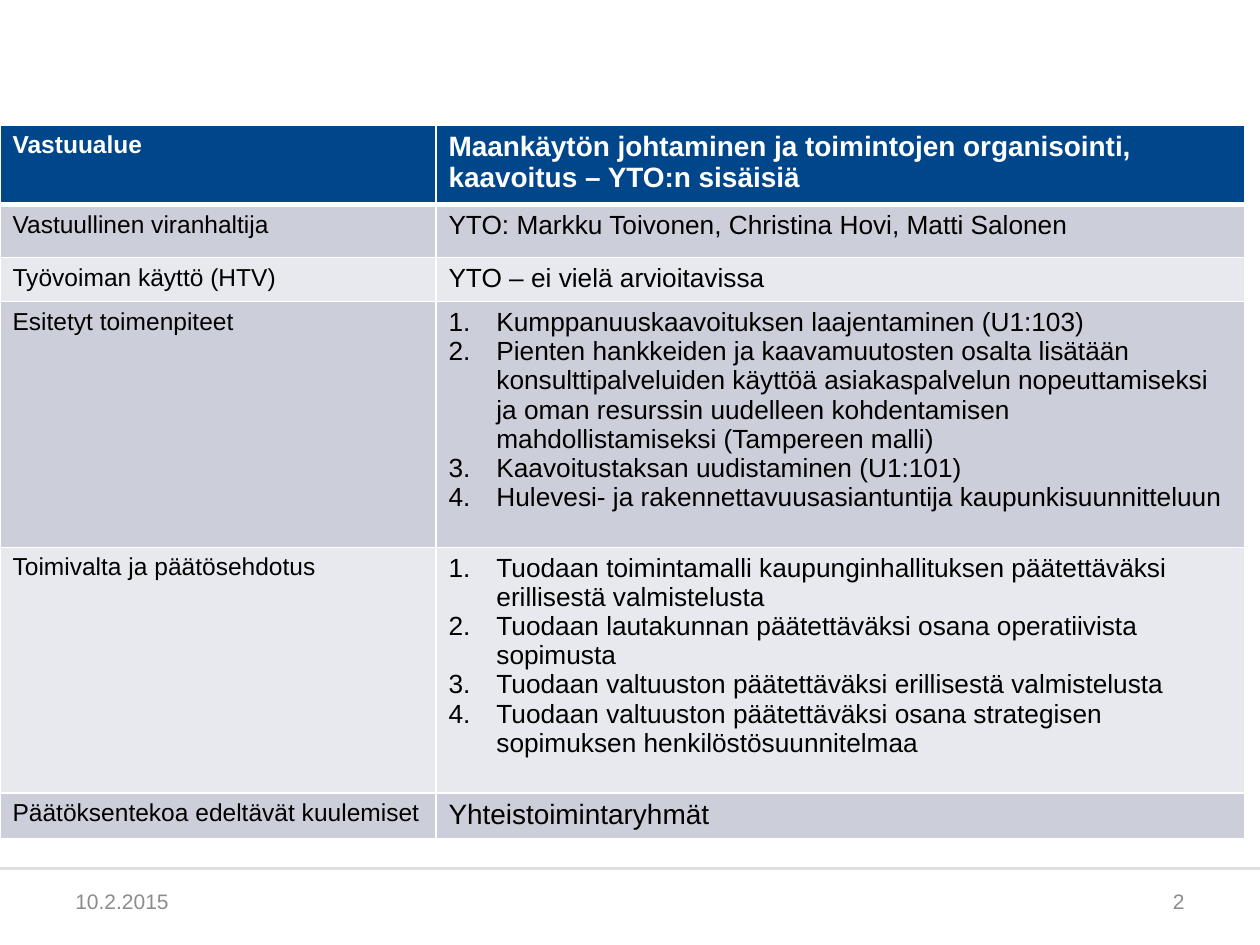
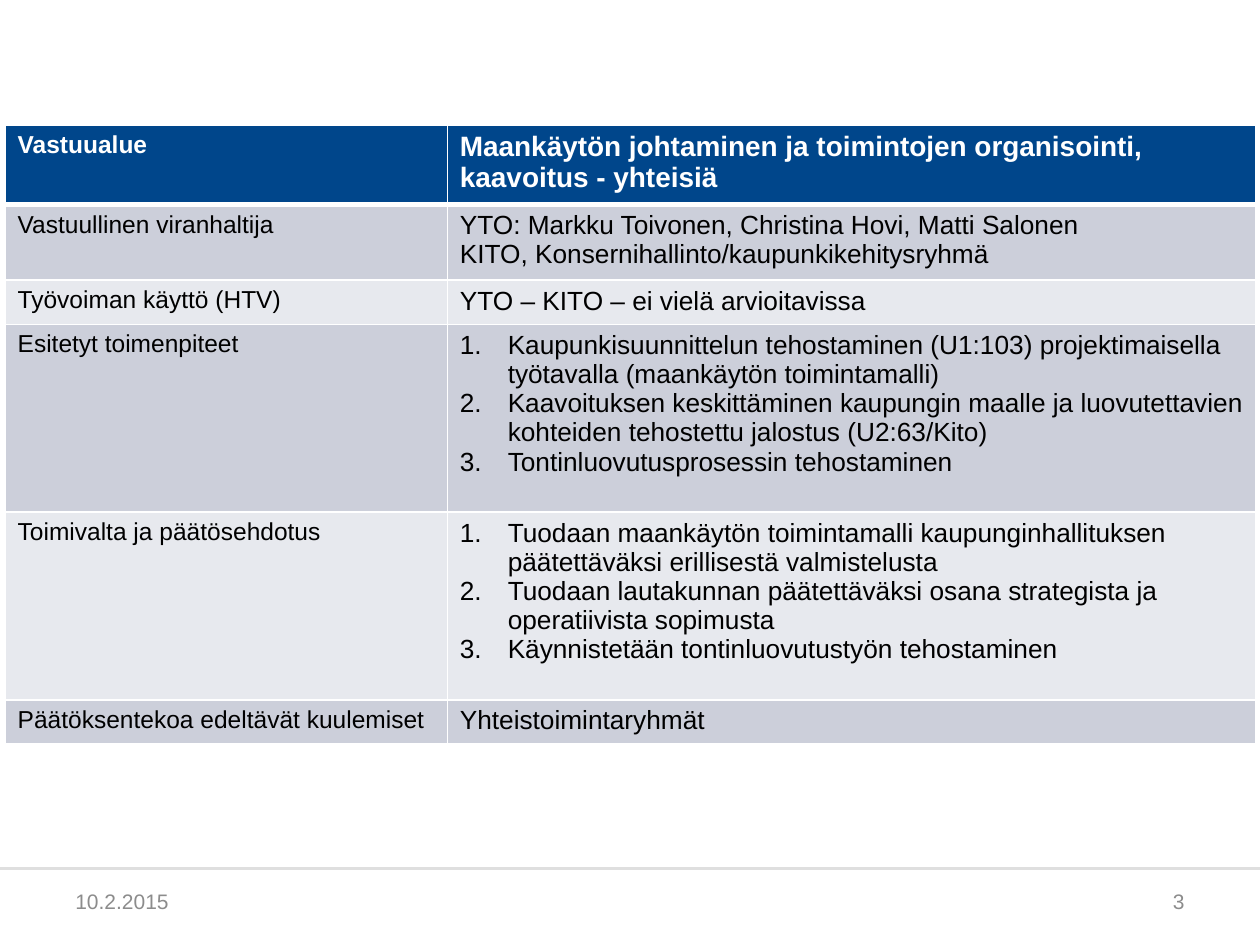
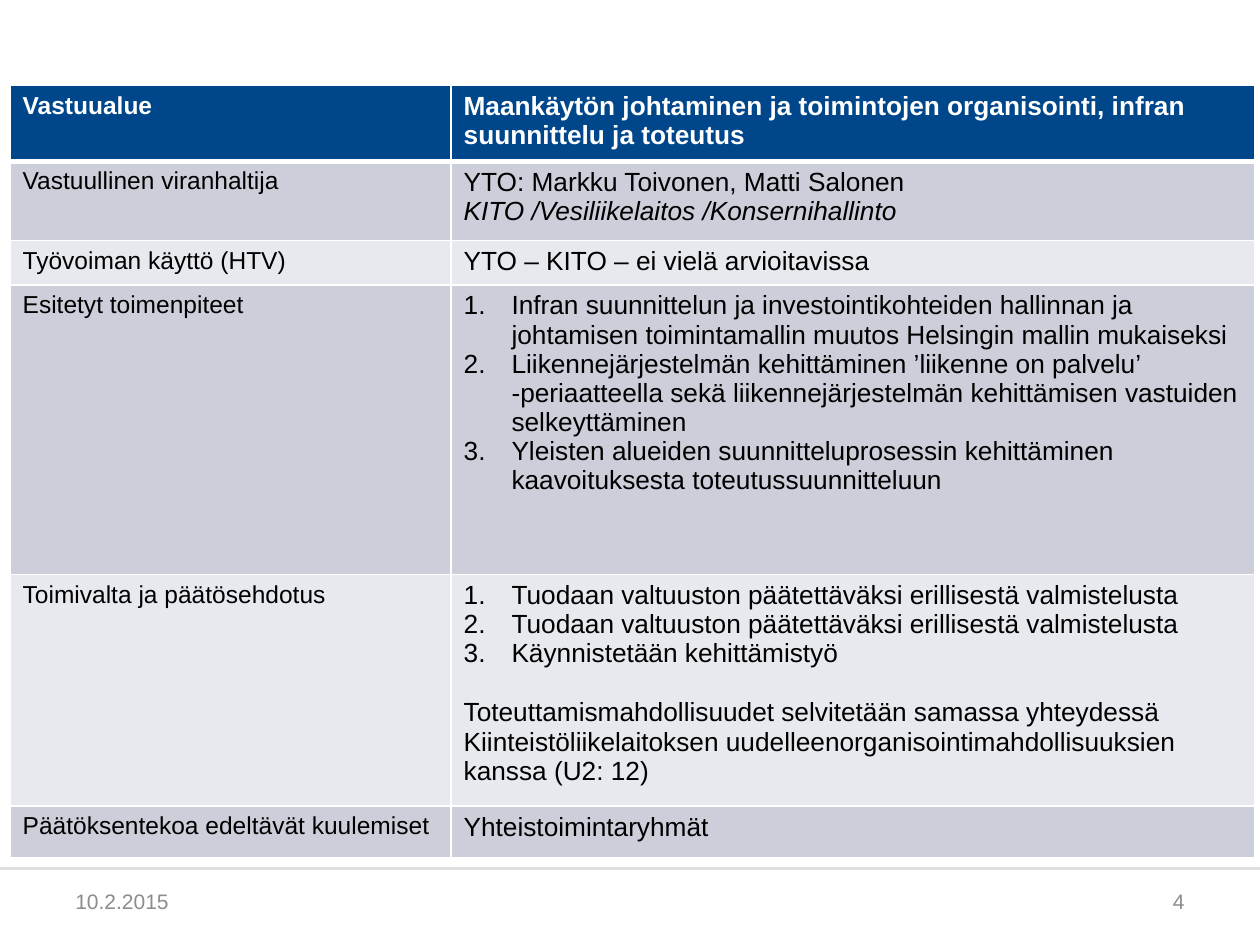
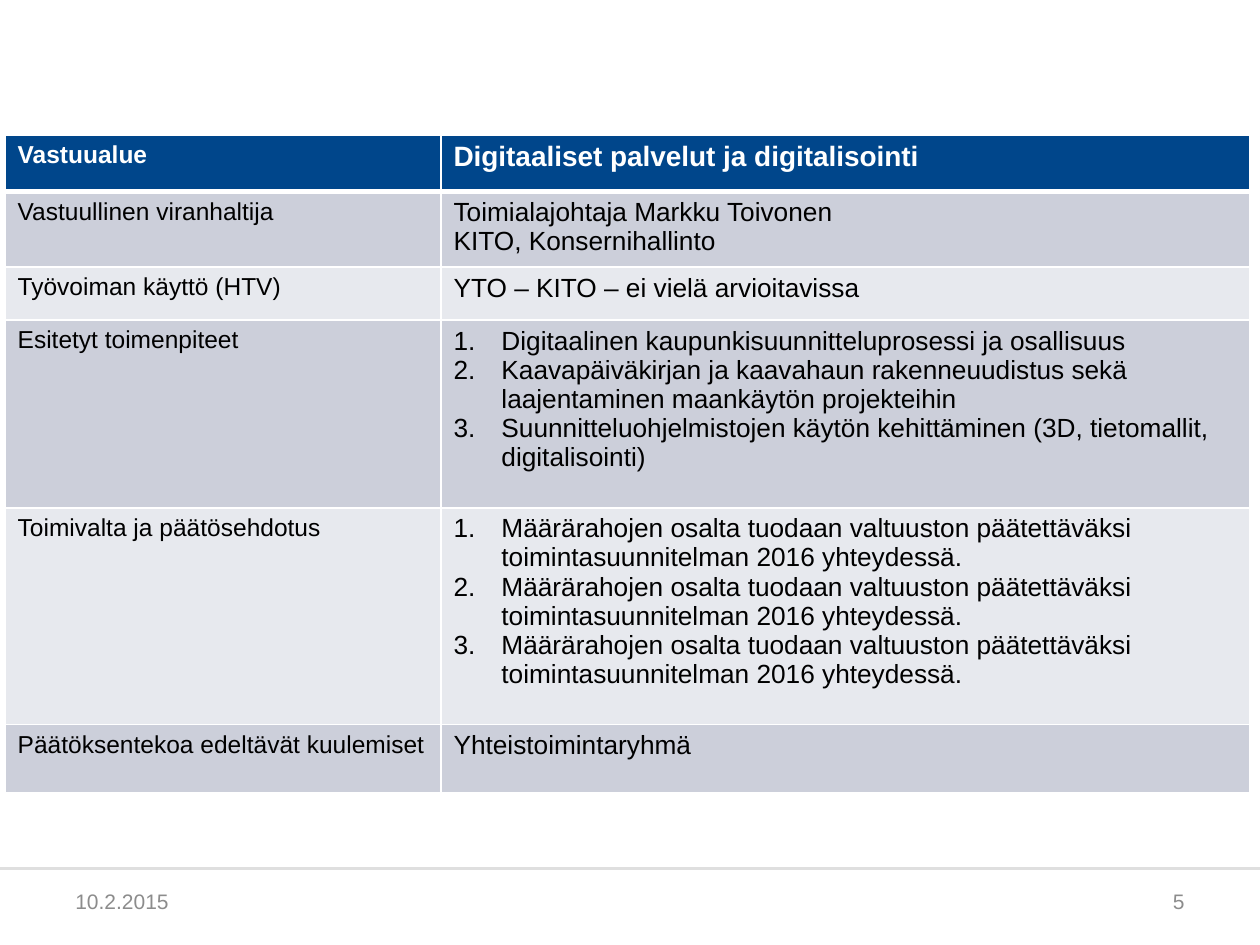
from dataclasses import dataclass

from lxml import etree
from pptx import Presentation
from pptx.dml.color import RGBColor
from pptx.enum.shapes import MSO_CONNECTOR, MSO_SHAPE
from pptx.enum.text import MSO_ANCHOR, PP_ALIGN
from pptx.oxml import parse_xml
from pptx.oxml.ns import nsdecls, qn
from pptx.util import Inches, Pt

STRAIGHT = MSO_CONNECTOR.STRAIGHT
RECTANGLE = MSO_SHAPE.RECTANGLE
MIDDLE = MSO_ANCHOR.MIDDLE
LEFT, RIGHT = PP_ALIGN.LEFT, PP_ALIGN.RIGHT


@dataclass(frozen=True)
class Theme:
    font: str = "Arial"
    white: str = "FFFFFF"
    black: str = "000000"
    header: str = "00468B"
    bands: tuple = ("CCCFDA", "E7E9EE")
    rule: str = "DFDFDF"
    footer: str = "8C8C8C"
    footer_size: int = 12
    label_size: int = 14
    body_size: int = 15
    large_size: int = 16
    border: float = 1
    header_border: float = 3
    step_indent: float = 0.38
    note_gap: int = 17


THEME = Theme()


def steps(*texts):
    """Mark paragraphs as a numbered list."""
    return [dict(text=text, numbered=True) for text in texts]


# Content
DATE = "10.2.2015"
FIRST_PAGE = 2
LABELS = (
    "Vastuualue",
    "Vastuullinen viranhaltija",
    "Työvoiman käyttö (HTV)",
    "Esitetyt toimenpiteet",
    "Toimivalta ja päätösehdotus",
    "Päätöksentekoa edeltävät kuulemiset",
)
BUDGET = ("Määrärahojen osalta tuodaan valtuuston päätettäväksi "
          "toimintasuunnitelman 2016 yhteydessä.")
COUNCIL = "Tuodaan valtuuston päätettäväksi erillisestä valmistelusta"
SHARED_WORK = "YTO – KITO – ei vielä arvioitavissa"
LEADERS = "YTO: Markku Toivonen, Christina Hovi, Matti Salonen"

PAGES = [
    dict(
        corner=(0, 0.99), columns=(3.46, 6.42),
        rows=(0.59, 0.42, 0.34, 1.95, 1.95, 0.35),
        cells=[
            [dict(text="Maankäytön johtaminen ja toimintojen organisointi, "
                       "kaavoitus – YTO:n sisäisiä", size=THEME.large_size)],
            [dict(text=LEADERS)],
            [dict(text="YTO – ei vielä arvioitavissa")],
            steps(
                "Kumppanuuskaavoituksen laajentaminen (U1:103)",
                "Pienten hankkeiden ja kaavamuutosten osalta lisätään "
                "konsulttipalveluiden käyttöä asiakaspalvelun nopeuttamiseksi "
                "ja oman resurssin uudelleen kohdentamisen "
                "mahdollistamiseksi (Tampereen malli)",
                "Kaavoitustaksan uudistaminen (U1:101)",
                "Hulevesi- ja rakennettavuusasiantuntija kaupunkisuunnitteluun",
            ),
            steps(
                "Tuodaan toimintamalli kaupunginhallituksen päätettäväksi "
                "erillisestä valmistelusta",
                "Tuodaan lautakunnan päätettäväksi osana operatiivista sopimusta",
                COUNCIL,
                "Tuodaan valtuuston päätettäväksi osana strategisen "
                "sopimuksen henkilöstösuunnitelmaa",
            ),
            [dict(text="Yhteistoimintaryhmät", size=THEME.large_size)],
        ],
    ),
    dict(
        corner=(0.04, 0.99), columns=(3.51, 6.42),
        rows=(0.59, 0.56, 0.34, 1.49, 1.49, 0.33),
        cells=[
            [dict(text="Maankäytön johtaminen ja toimintojen organisointi, "
                       "kaavoitus - yhteisiä", size=THEME.large_size)],
            [dict(text=LEADERS),
             dict(text="KITO, Konsernihallinto/kaupunkikehitysryhmä")],
            [dict(text=SHARED_WORK)],
            steps(
                "Kaupunkisuunnittelun tehostaminen (U1:103) projektimaisella "
                "työtavalla (maankäytön toimintamalli)",
                "Kaavoituksen keskittäminen kaupungin maalle ja luovutettavien "
                "kohteiden tehostettu jalostus (U2:63/Kito)",
                "Tontinluovutusprosessin tehostaminen",
            ),
            steps(
                "Tuodaan maankäytön toimintamalli kaupunginhallituksen "
                "päätettäväksi erillisestä valmistelusta",
                "Tuodaan lautakunnan päätettäväksi osana strategista ja "
                "operatiivista sopimusta",
                "Käynnistetään tontinluovutustyön tehostaminen",
            ),
            [dict(text="Yhteistoimintaryhmät")],
        ],
    ),
    dict(
        corner=(0.08, 0.68), columns=(3.5, 6.38),
        rows=(0.56, 0.63, 0.33, 2.3, 1.73, 0.41),
        cells=[
            [dict(text="Maankäytön johtaminen ja toimintojen organisointi, "
                       "infran suunnittelu ja toteutus")],
            [dict(text="YTO: Markku Toivonen, Matti Salonen"),
             dict(text="KITO /Vesiliikelaitos /Konsernihallinto", italic=True)],
            [dict(text=SHARED_WORK)],
            steps(
                "Infran suunnittelun ja investointikohteiden hallinnan ja "
                "johtamisen toimintamallin muutos Helsingin mallin mukaiseksi",
                "Liikennejärjestelmän kehittäminen ’liikenne on palvelu’ "
                "-periaatteella sekä liikennejärjestelmän kehittämisen "
                "vastuiden selkeyttäminen",
                "Yleisten alueiden suunnitteluprosessin kehittäminen "
                "kaavoituksesta toteutussuunnitteluun",
            ),
            steps(COUNCIL, COUNCIL, "Käynnistetään kehittämistyö") + [
                dict(text="Toteuttamismahdollisuudet selvitetään samassa "
                          "yhteydessä Kiinteistöliikelaitoksen "
                          "uudelleenorganisointimahdollisuuksien kanssa (U2: 12)",
                     space_before=THEME.note_gap)],
            [dict(text="Yhteistoimintaryhmät")],
        ],
    ),
    dict(
        corner=(0.04, 1.07), columns=(3.46, 6.42),
        rows=(0.45, 0.56, 0.42, 1.49, 1.72, 0.54),
        cells=[
            [dict(text="Digitaaliset palvelut ja digitalisointi",
                  size=THEME.large_size)],
            [dict(text="Toimialajohtaja Markku Toivonen"),
             dict(text="KITO, Konsernihallinto")],
            [dict(text=SHARED_WORK)],
            steps(
                "Digitaalinen kaupunkisuunnitteluprosessi ja osallisuus",
                "Kaavapäiväkirjan ja kaavahaun rakenneuudistus sekä "
                "laajentaminen maankäytön projekteihin",
                "Suunnitteluohjelmistojen käytön kehittäminen (3D, tietomallit, "
                "digitalisointi)",
            ),
            steps(BUDGET, BUDGET, BUDGET),
            [dict(text="Yhteistoimintaryhmä")],
        ],
    ),
]


# Text and formatting
def write(para, text, *, size=THEME.body_size, color=THEME.black, bold=False,
          italic=False, numbered=False, space_before=0, align=LEFT):
    para.alignment = align
    if space_before:
        para.space_before = Pt(space_before)
    if numbered:
        properties = para._p.get_or_add_pPr()
        indent = Inches(THEME.step_indent)
        properties.set("marL", str(indent))
        properties.set("indent", str(-indent))
        etree.SubElement(properties, qn("a:buFont")).set("typeface", "+mj-lt")
        etree.SubElement(properties, qn("a:buAutoNum")).set("type", "arabicPeriod")
    span = para.add_run()
    span.text = text
    span.font.name = THEME.font
    span.font.size = Pt(size)
    span.font.bold = bold
    span.font.italic = italic
    span.font.color.rgb = RGBColor.from_string(color)


def set_borders(cell, top, bottom):
    properties = cell._tc.get_or_add_tcPr()
    widths = dict(lnL=THEME.border, lnR=THEME.border, lnT=top, lnB=bottom)
    for edge, width in widths.items():
        properties.append(parse_xml(
            f'<a:{edge} {nsdecls("a")} w="{Pt(width)}"><a:solidFill>'
            f'<a:srgbClr val="{THEME.white}"/></a:solidFill></a:{edge}>'))


# Footer: band, rule, date and page number
def add_footer_text(slide, left, text, align):
    box = slide.shapes.add_textbox(Inches(left), Inches(6.95), Inches(2.33), Inches(0.4))
    frame = box.text_frame
    frame.word_wrap = True
    frame.vertical_anchor = MIDDLE
    write(frame.paragraphs[0], text, size=THEME.footer_size,
          color=THEME.footer, align=align)


def add_footer(slide, page_number):
    band = slide.shapes.add_shape(RECTANGLE, 0, Inches(6.9), Inches(10), Inches(0.6))
    band.fill.solid()
    band.fill.fore_color.rgb = RGBColor.from_string(THEME.white)
    band.line.fill.background()
    band._element.spPr.append(parse_xml(
        f'<a:effectLst {nsdecls("a")}><a:outerShdw blurRad="{Pt(3.1)}" '
        f'dist="{Pt(1.8)}" dir="5400000" rotWithShape="0">'
        f'<a:srgbClr val="{THEME.black}"><a:alpha val="35000"/></a:srgbClr>'
        '</a:outerShdw></a:effectLst>'))

    rule = slide.shapes.add_connector(STRAIGHT, 0, Inches(6.89), Inches(10), Inches(6.89))
    rule.line.color.rgb = RGBColor.from_string(THEME.rule)
    rule.line.width = Pt(1.75)
    etree.SubElement(rule._element.spPr, qn("a:effectLst"))

    add_footer_text(slide, 0.5, DATE, LEFT)
    add_footer_text(slide, 7.17, str(page_number), RIGHT)


# Responsibility table
def add_responsibility_table(slide, corner, columns, rows, cells):
    left, top = corner
    table = slide.shapes.add_table(
        len(rows), len(columns), Inches(left), Inches(top),
        Inches(sum(columns)), Inches(sum(rows))).table
    for column, width in zip(table.columns, columns):
        column.width = Inches(width)
    for row, height in zip(table.rows, rows):
        row.height = Inches(height)

    for index, (label, answer) in enumerate(zip(LABELS, cells)):
        is_header = index == 0
        fill = THEME.header if is_header else THEME.bands[(index - 1) % 2]
        color = THEME.white if is_header else THEME.black
        upper = THEME.header_border if index == 1 else THEME.border
        lower = THEME.header_border if is_header else THEME.border
        contents = ([dict(text=label, size=THEME.label_size)], answer)
        for column, paragraphs in enumerate(contents):
            cell = table.cell(index, column)
            set_borders(cell, upper, lower)
            cell.fill.solid()
            cell.fill.fore_color.rgb = RGBColor.from_string(fill)
            frame = cell.text_frame
            for order, paragraph in enumerate(paragraphs):
                para = frame.add_paragraph() if order else frame.paragraphs[0]
                write(para, color=color, bold=is_header, **paragraph)


def main():
    deck = Presentation()
    deck.slide_width, deck.slide_height = Inches(10), Inches(7.5)
    blank = deck.slide_layouts[6]
    for page_number, page in enumerate(PAGES, FIRST_PAGE):
        slide = deck.slides.add_slide(blank)
        add_footer(slide, page_number)
        add_responsibility_table(slide, **page)
    deck.save("out.pptx")


if __name__ == "__main__":
    main()
